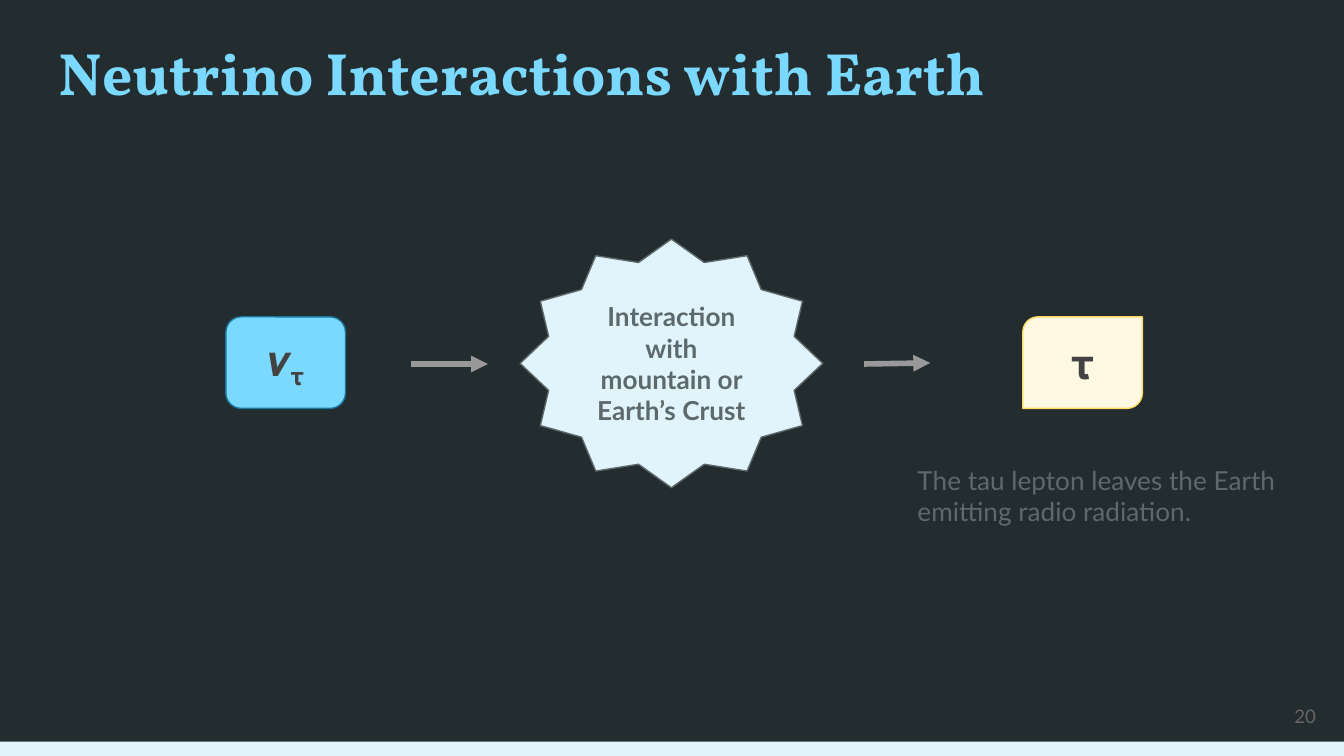
import pptx
import pptx.dml.color
import pptx.enum.shapes
import pptx.enum.text
import pptx.oxml.ns
import pptx.util
from lxml import etree
from pptx.util import Cm

COLORS = {
    "background": "232D30",
    "sky": "7BD8FF",
    "sky_line": "1A779D",
    "ice": "E1F4FC",
    "slate": "5E696C",
    "cream": "FFF8E3",
    "gold": "FFD966",
    "charcoal": "434343",
    "arrow": "999999",
    "number": "666666",
}
SHAPES = pptx.enum.shapes.MSO_SHAPE
ALIGN = pptx.enum.text.PP_ALIGN
ANCHOR = pptx.enum.text.MSO_ANCHOR
BOX_TOP, BOX_WIDTH, BOX_HEIGHT = 5.99, 2.26, 1.73


def rgb(name):
    return pptx.dml.color.RGBColor.from_string(COLORS[name])


def write_text(shape, runs, size, color, font="Lato", bold=False,
               align=ALIGN.LEFT, anchor=ANCHOR.TOP):
    """Fill the shape with one paragraph of (text, baseline percent) runs."""
    frame = shape.text_frame
    frame.word_wrap = True
    frame.vertical_anchor = anchor
    frame.margin_left = frame.margin_right = Cm(0.25)
    frame.margin_top = frame.margin_bottom = Cm(0.25)
    paragraph = frame.paragraphs[0]
    paragraph.alignment = align
    for text, baseline in runs:
        run = paragraph.add_run()
        run.text = text
        run.font.name = font
        run.font.size = pptx.util.Pt(size)
        run.font.bold = bold
        run.font.color.rgb = rgb(color)
        if baseline:
            run.font._element.set("baseline", str(baseline * 1000))
    return paragraph


def add_text(slide, left, top, width, height, text, size, color, **style):
    box = slide.shapes.add_textbox(Cm(left), Cm(top), Cm(width), Cm(height))
    return box, write_text(box, [(text, 0)], size, color, **style)


def add_shape(slide, kind, left, top, width, height, fill, line=None, adjustments=()):
    shape = slide.shapes.add_shape(kind, Cm(left), Cm(top), Cm(width), Cm(height))
    shape.shadow.inherit = False
    shape.fill.solid()
    shape.fill.fore_color.rgb = rgb(fill)
    if line:
        shape.line.color.rgb = rgb(line)
        shape.line.width = pptx.util.Pt(0.75)
    else:
        shape.line.fill.background()
    for index, value in enumerate(adjustments):
        shape.adjustments[index] = value
    return shape


def add_arrow(slide, start_x, start_y, end_x, end_y):
    arrow = slide.shapes.add_connector(
        pptx.enum.shapes.MSO_CONNECTOR.STRAIGHT,
        Cm(start_x), Cm(start_y), Cm(end_x), Cm(end_y))
    arrow.line.color.rgb = rgb("arrow")
    arrow.line.width = pptx.util.Pt(3)
    qn = pptx.oxml.ns.qn
    etree.SubElement(arrow.line._get_or_add_ln(), qn("a:tailEnd"), type="triangle")
    etree.SubElement(arrow._element.spPr, qn("a:effectLst"))


def add_particle(slide, kind, left, fill, line, adjustments, runs):
    box = add_shape(slide, kind, left, BOX_TOP, BOX_WIDTH, BOX_HEIGHT,
                    fill, line, adjustments)
    write_text(box, runs, 22, "charcoal", bold=True,
               align=ALIGN.CENTER, anchor=ANCHOR.MIDDLE)


def add_interaction(slide):
    star = add_shape(slide, SHAPES.STAR_12_POINT, 9.83, 4.52, 5.72, 4.7,
                     "ice", "slate", [0.42])
    write_text(star, [("Interaction with mountain or Earth’s Crust", 0)], 14, "slate",
               bold=True, align=ALIGN.CENTER, anchor=ANCHOR.MIDDLE)


def main():
    presentation = pptx.Presentation()
    presentation.slide_width = Cm(25.4)
    presentation.slide_height = Cm(14.29)
    slide = presentation.slides.add_slide(presentation.slide_layouts[6])
    slide.background.fill.solid()
    slide.background.fill.fore_color.rgb = rgb("background")

    add_shape(slide, SHAPES.RECTANGLE, 0, 14.02, 25.4, 0.27, "ice")
    add_text(slide, 0.86, 0.43, 23.67, 1.73, "Neutrino Interactions with Earth",
             32, "sky", font="Vollkorn", bold=True)
    add_text(slide, 23.6, 13, 1.52, 1.09, "20", 10, "number",
             align=ALIGN.RIGHT, anchor=ANCHOR.MIDDLE)

    add_interaction(slide)
    add_particle(slide, SHAPES.ROUNDED_RECTANGLE, 4.27, "sky", "sky_line",
                 [0.167], [("𝝂", 0), ("𝛕", -25)])
    add_particle(slide, SHAPES.ROUND_2_DIAG_RECTANGLE, 19.33, "cream", "gold",
                 [0.167, 0], [("𝛕", 0)])
    add_arrow(slide, 7.77, 6.88, 9.22, 6.88)
    add_arrow(slide, 16.33, 6.88, 17.58, 6.86)

    caption, paragraph = add_text(
        slide, 17.09, 8.53, 7.72, 1.7,
        "The tau lepton leaves the Earth emitting radio radiation.", 14, "slate")
    caption.text_frame.auto_size = pptx.enum.text.MSO_AUTO_SIZE.SHAPE_TO_FIT_TEXT
    paragraph.space_before = pptx.util.Pt(10)

    presentation.save("out.pptx")


if __name__ == "__main__":
    main()
